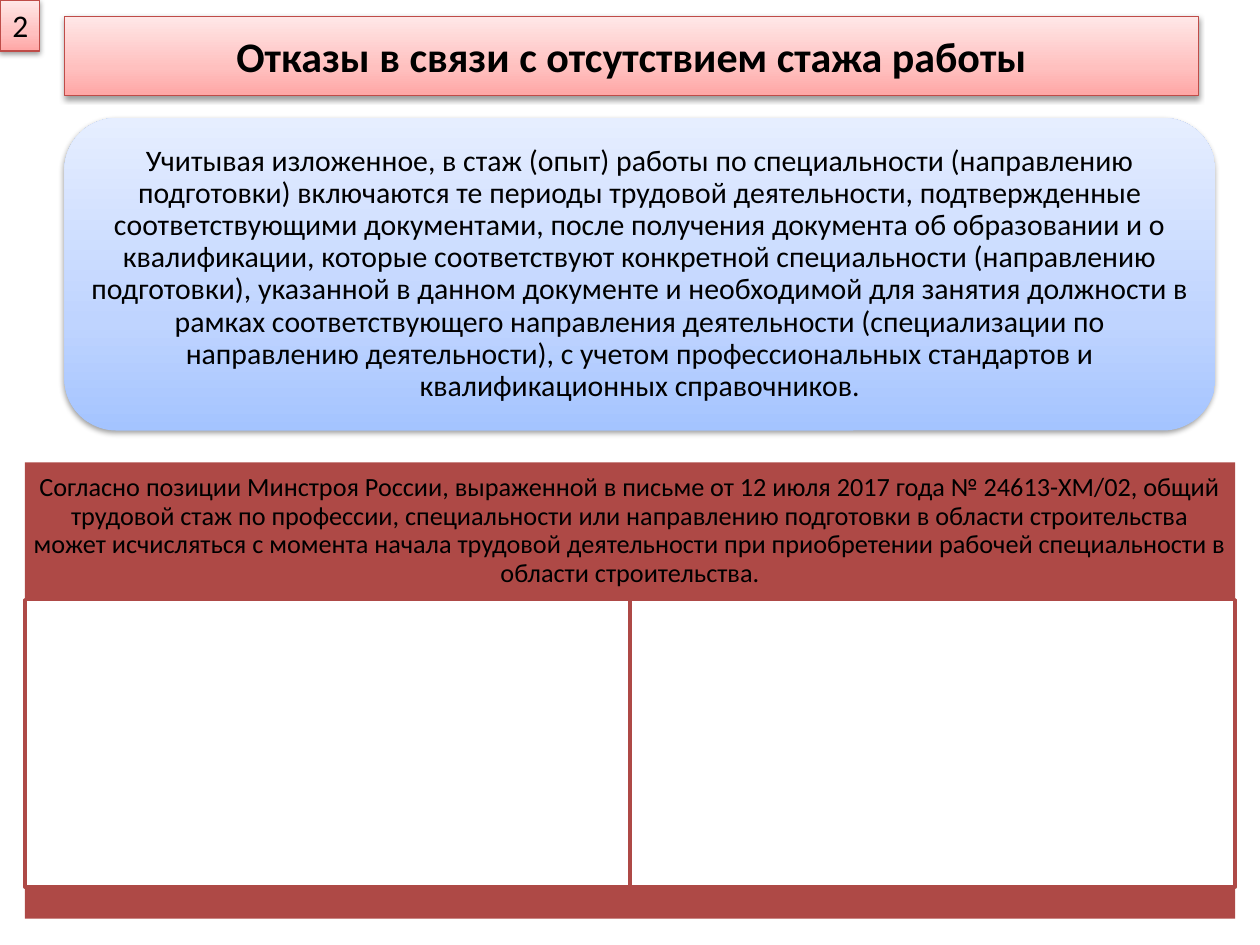
from dataclasses import dataclass
from typing import Optional

from lxml.etree import SubElement
from pptx import Presentation
from pptx.dml.color import RGBColor
from pptx.enum.shapes import MSO_SHAPE
from pptx.enum.text import MSO_ANCHOR, MSO_AUTO_SIZE, PP_ALIGN
from pptx.oxml.ns import qn
from pptx.util import Cm, Pt

BLACK = RGBColor(0x00, 0x00, 0x00)
WHITE = RGBColor(0xFF, 0xFF, 0xFF)
BRICK = RGBColor(0xAE, 0x49, 0x46)
PINK_EDGE = RGBColor(0xBF, 0x4C, 0x48)
PINK_STOPS = (
    (0, RGBColor(0xFF, 0xA6, 0xA5)),
    (35, RGBColor(0xFF, 0xC0, 0xBF)),
    (100, RGBColor(0xFF, 0xE7, 0xE7)),
)
BLUE_STOPS = (
    (0, RGBColor(0xA4, 0xC4, 0xFF)),
    (35, RGBColor(0xBF, 0xD4, 0xFF)),
    (100, RGBColor(0xE6, 0xEE, 0xFF)),
)

TITLE = "Отказы в связи с отсутствием стажа работы"
CONCLUSION = (
    "Учитывая изложенное, в стаж (опыт) работы по специальности (направлению "
    "подготовки) включаются те периоды трудовой деятельности, подтвержденные "
    "соответствующими документами, после получения документа об образовании и о "
    "квалификации, которые соответствуют конкретной специальности (направлению "
    "подготовки), указанной в данном документе и необходимой для занятия должности в "
    "рамках соответствующего направления деятельности (специализации по "
    "направлению деятельности), с учетом профессиональных стандартов и "
    "квалификационных справочников."
)
MINISTRY_POSITION = (
    "Согласно позиции Минстроя России, выраженной в письме от 12 июля 2017 года "
    "№ 24613-ХМ/02, общий трудовой стаж по профессии, специальности или направлению "
    "подготовки в области строительства может исчисляться с момента начала трудовой "
    "деятельности при приобретении рабочей специальности в области строительства."
)


@dataclass
class Label:
    text: str
    size: float
    bold: bool = False
    align: PP_ALIGN = PP_ALIGN.CENTER
    anchor: MSO_ANCHOR = MSO_ANCHOR.MIDDLE
    spacing: float = 1.0
    margin_x: float = 0.25
    margin_y: float = 0.13


@dataclass
class Panel:
    """Position in centimetres, with either a solid fill or gradient stops."""
    left: float
    top: float
    width: float
    height: float
    fill: Optional[RGBColor] = None
    stops: tuple = ()
    edge: Optional[RGBColor] = None
    edge_width: float = 0.75
    label: Optional[Label] = None
    preset: MSO_SHAPE = MSO_SHAPE.RECTANGLE


def fill_gradient(shape, stops: tuple) -> None:
    shape.fill.gradient()
    shape.fill.gradient_angle = 90
    stop_list = shape._element.spPr.find(qn("a:gradFill")).find(qn("a:gsLst"))
    for old_stop in list(stop_list):
        stop_list.remove(old_stop)
    for percent, color in stops:
        stop = SubElement(stop_list, qn("a:gs"), pos=str(percent * 1000))
        SubElement(stop, qn("a:srgbClr"), val=str(color))


def add_shadow(shape) -> None:
    effects = shape._element.spPr.find(qn("a:effectLst"))
    shadow = SubElement(effects, qn("a:outerShdw"), blurRad="40000", dist="20000",
                        dir="5400000", rotWithShape="0")
    color = SubElement(shadow, qn("a:srgbClr"), val=str(BLACK))
    SubElement(color, qn("a:alpha"), val="38000")


def write_label(shape, label: Label) -> None:
    frame = shape.text_frame
    frame.text = label.text
    paragraph = frame.paragraphs[0]
    formats = {
        frame: {
            "word_wrap": True,
            "auto_size": MSO_AUTO_SIZE.NONE,
            "vertical_anchor": label.anchor,
            "margin_left": Cm(label.margin_x),
            "margin_right": Cm(label.margin_x),
            "margin_top": Cm(label.margin_y),
            "margin_bottom": Cm(label.margin_y),
        },
        paragraph: {"alignment": label.align, "line_spacing": label.spacing},
        paragraph.runs[0].font: {
            "name": "Calibri", "size": Pt(label.size), "bold": label.bold,
        },
    }
    for target, values in formats.items():
        for attribute, value in values.items():
            setattr(target, attribute, value)
    paragraph.runs[0].font.color.rgb = BLACK


def format_panel(shape, panel: Panel) -> None:
    for side in ("left", "top", "width", "height"):
        setattr(shape, side, Cm(getattr(panel, side)))
    shape.shadow.inherit = False
    if panel.stops:
        fill_gradient(shape, panel.stops)
        add_shadow(shape)
    else:
        shape.fill.solid()
        shape.fill.fore_color.rgb = panel.fill
    if panel.edge is None:
        shape.line.fill.background()
    else:
        shape.line.color.rgb = panel.edge
        shape.line.width = Pt(panel.edge_width)
    if panel.label:
        write_label(shape, panel.label)


def add_panel(slide, panel: Panel) -> None:
    shape = slide.shapes.add_shape(panel.preset, 0, 0, 0, 0)
    format_panel(shape, panel)


def ministry_block() -> list[Panel]:
    """Header band, two equal empty cells and a footer band, stacked."""
    left, top, width = 0.5, 9.32, 24.4
    header, body, footer = 2.77, 5.79, 0.64
    cell_width = width / 2
    position = Label(MINISTRY_POSITION, 15, spacing=0.9, margin_x=0.15, margin_y=0.15)
    cells = [
        Panel(left + column * cell_width, top + header, cell_width, body,
              fill=WHITE, edge=BRICK, edge_width=2)
        for column in range(2)
    ]
    return [
        Panel(left, top, width, header, fill=BRICK, label=position),
        *cells,
        Panel(left, top + header + body, width, footer, fill=BRICK),
    ]


def main() -> None:
    presentation = Presentation()
    presentation.slide_width, presentation.slide_height = Cm(25.4), Cm(19.05)
    slide = presentation.slides.add_slide(presentation.slide_layouts[5])

    heading = Panel(1.3, 0.33, 22.86, 1.6, stops=PINK_STOPS, edge=PINK_EDGE,
                    label=Label(TITLE, 24, bold=True))
    format_panel(slide.shapes.title, heading)

    conclusion = Panel(
        1.3, 2.38, 23.2, 6.3, stops=BLUE_STOPS, preset=MSO_SHAPE.ROUNDED_RECTANGLE,
        label=Label(CONCLUSION, 17, spacing=0.9, margin_x=0.18, margin_y=0.18))
    page_number = Panel(
        0, 0, 0.8, 1.03, stops=PINK_STOPS, edge=PINK_EDGE,
        label=Label("2", 18, align=PP_ALIGN.LEFT, anchor=MSO_ANCHOR.TOP))
    for panel in (conclusion, page_number, *ministry_block()):
        add_panel(slide, panel)

    presentation.save("out.pptx")


if __name__ == "__main__":
    main()
